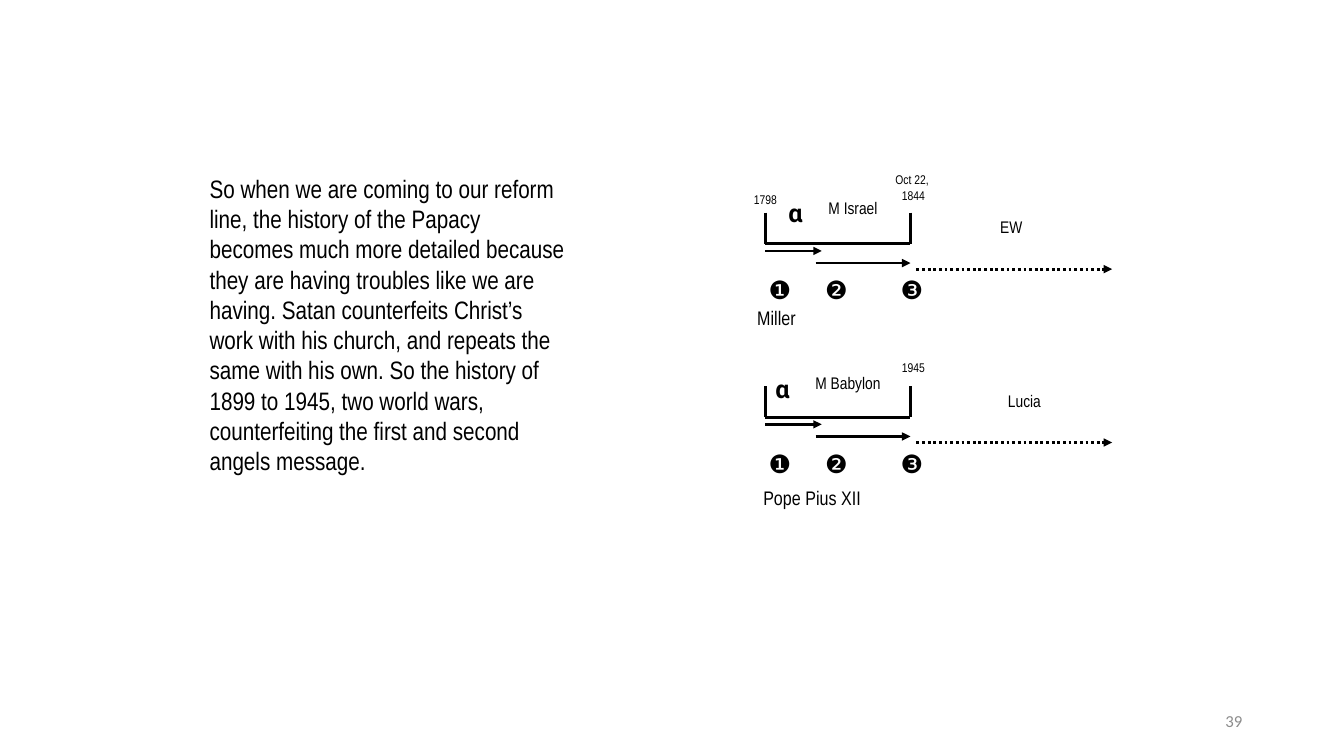
"""Build a slide that sets two parallel reform timelines beside a paragraph."""
from lxml import etree
from pptx import Presentation
from pptx import util as u
from pptx.dml.color import RGBColor
from pptx.enum import dml, shapes, text
from pptx.oxml.ns import qn

LEFT, CENTER, RIGHT = text.PP_ALIGN.LEFT, text.PP_ALIGN.CENTER, text.PP_ALIGN.RIGHT
NARROW = "Arial Narrow"
BODY = (
    "So when we are coming to our reform line, the history of the Papacy becomes "
    "much more detailed because they are having troubles like we are having. Satan "
    "counterfeits Christ’s work with his church, and repeats the same with his own. "
    "So the history of 1899 to 1945, two world wars, counterfeiting the first and "
    "second angels message."
)


def color(value):
    return RGBColor.from_string(value)


class TimelineSlide:
    ink = "000000"
    line_width = 2
    label_margins = (0.04, 0.04)
    box_margins = (0.1, 0.05)

    def __init__(self, presentation):
        self.slide = presentation.slides.add_slide(presentation.slide_layouts[6])

    def label(self, box, lines, size, font=NARROW, align=CENTER, bold=False,
              ink=ink, margins=label_margins, anchor=text.MSO_ANCHOR.TOP):
        shape = self.slide.shapes.add_textbox(*map(u.Inches, box))
        frame = shape.text_frame
        frame.word_wrap = True
        frame.vertical_anchor = anchor
        frame.margin_left = frame.margin_right = u.Inches(margins[0])
        frame.margin_top = frame.margin_bottom = u.Inches(margins[1])
        for index, line in enumerate(lines):
            paragraph = frame.add_paragraph() if index else frame.paragraphs[0]
            paragraph.alignment = align
            run = paragraph.add_run()
            run.text = line
            run.font.name = font
            run.font.size = u.Pt(size)
            run.font.bold = bold
            run.font.color.rgb = color(ink)

    def line(self, start, end, arrow=False, dotted=False):
        connector = self.slide.shapes.add_connector(
            shapes.MSO_CONNECTOR.STRAIGHT, *map(u.Inches, start + end))
        connector.line.width = u.Pt(self.line_width)
        connector.line.color.rgb = color(self.ink)
        if dotted:
            connector.line.dash_style = dml.MSO_LINE.ROUND_DOT
        if arrow:
            outline = connector.line._get_or_add_ln()
            etree.SubElement(outline, qn("a:tailEnd"), type="triangle")
        etree.SubElement(connector._element.spPr, qn("a:effectLst"))

    def timeline(self, base, marks_top):
        start, end, overlap = 7.59, 9.03, 8.09
        self.line((start, base), (end, base))
        for post in (start, end):
            self.line((post, base - 0.31), (post, base))
        self.line((start, base + 0.07), (8.15, base + 0.07), arrow=True)
        self.line((overlap, base + 0.19), (end, base + 0.19), arrow=True)
        self.line((9.09, base + 0.25), (11.03, base + 0.25), arrow=True, dotted=True)
        for mark, left in zip("❶❷❸", (7.53, overlap, 8.84)):
            self.label((left, marks_top, 0.41, 0.3), [mark], 18, "Arial")


def main():
    presentation = Presentation()
    presentation.slide_width = u.Inches(13.33)
    presentation.slide_height = u.Inches(7.5)
    page = TimelineSlide(presentation)

    page.label((9.42, 6.95, 3, 0.4), ["39"], 12, "Calibri", RIGHT, ink="8C8C8C",
               margins=page.box_margins, anchor=text.MSO_ANCHOR.MIDDLE)
    page.label((1.98, 1.67, 3.75, 3.43), [BODY], 18, align=LEFT,
               margins=page.box_margins)

    page.timeline(2.42, 2.68)
    page.timeline(4.14, 4.41)

    for box in ((7.78, 1.92, 0.31, 0.31), (7.65, 3.66, 0.31, 0.31)):
        page.label(box, ["α"], 18, "Roboto", LEFT, bold=True)

    for box, lines, size, align in (
        ((8.15, 1.92, 0.62, 0.31), ["M Israel"], 12, CENTER),
        ((7.97, 3.66, 0.88, 0.31), ["M Babylon"], 12, CENTER),
        ((9.59, 2.11, 0.88, 0.31), ["EW"], 12, CENTER),
        ((9.72, 3.84, 0.88, 0.31), ["Lucia"], 12, CENTER),
        ((7.4, 1.86, 0.38, 0.25), ["1798"], 9, CENTER),
        ((8.84, 1.67, 0.44, 0.44), ["Oct 22, ", "1844"], 9, CENTER),
        ((8.78, 3.53, 0.56, 0.31), ["1945"], 9, CENTER),
        ((7.47, 2.99, 1.25, 0.25), ["Miller"], 14, LEFT),
        ((7.53, 4.78, 1.25, 0.25), ["Pope Pius XII"], 14, LEFT),
    ):
        page.label(box, lines, size, align=align)

    presentation.save("out.pptx")


if __name__ == "__main__":
    main()
